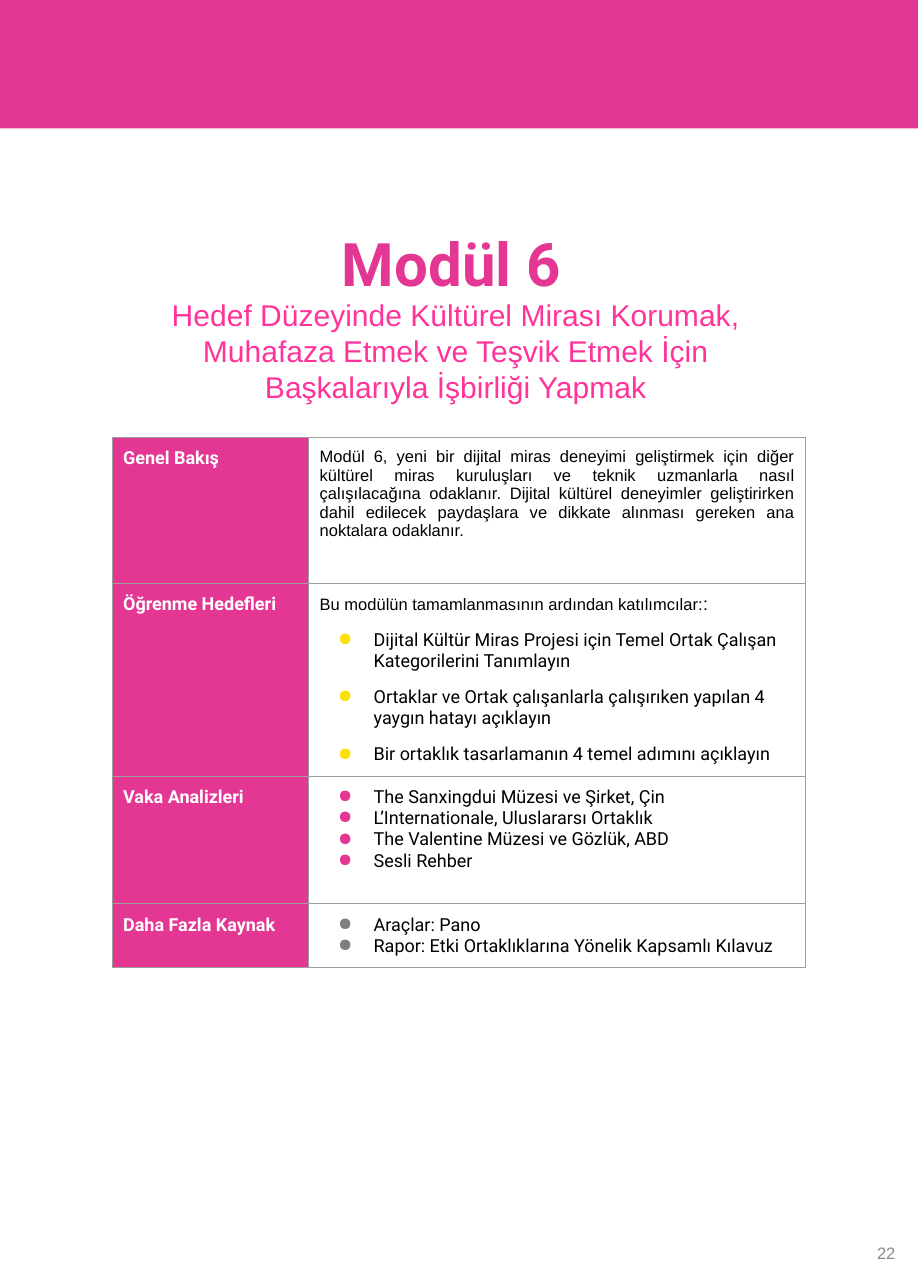
from lxml import etree
from pptx import Presentation
from pptx.dml.color import RGBColor
from pptx.enum.shapes import MSO_SHAPE
from pptx.enum.text import MSO_ANCHOR, MSO_AUTO_SIZE, PP_ALIGN
from pptx.oxml.ns import qn
from pptx.util import Inches, Pt

CENTER, RIGHT, JUSTIFY, LEFT = PP_ALIGN.CENTER, PP_ALIGN.RIGHT, PP_ALIGN.JUSTIFY, PP_ALIGN.LEFT
TOP, MIDDLE = MSO_ANCHOR.TOP, MSO_ANCHOR.MIDDLE
NO_FIT = MSO_AUTO_SIZE.NONE
RECTANGLE = MSO_SHAPE.RECTANGLE

COLORS = {
    "pink": "E43794", "subtitle": "FF3399", "yellow": "FBE000", "bullet_gray": "7F7F7F",
    "border": "9E9E9E", "number": "888888", "white": "FFFFFF", "black": "000000",
}
FORMATS = {
    "title": {"name": "Roboto", "size": Pt(40), "bold": True, "color": "pink"},
    "subtitle": {"name": "Arial", "size": Pt(20), "bold": False, "color": "subtitle"},
    "number": {"name": "Arial", "size": Pt(11), "bold": False, "color": "number"},
    "label": {"name": "Roboto", "size": Pt(12), "bold": True, "color": "white"},
    "prose": {"name": "Arial", "size": Pt(11), "bold": False, "color": "black"},
    "item": {"name": "Roboto", "size": Pt(12), "bold": False, "color": "black"},
}

TITLE = "Modül 6"
SUBTITLE = ("Hedef Düzeyinde Kültürel Mirası Korumak, Muhafaza Etmek ve Teşvik Etmek İçin "
            "Başkalarıyla İşbirliği Yapmak")
PAGE_NUMBER = "22"
SECTIONS = [
    {"label": "Genel Bakış", "height": 1.35, "align": JUSTIFY,
     "intro": [("Modül 6, yeni bir dijital miras deneyimi geliştirmek için diğer kültürel miras "
                "kuruluşları ve teknik uzmanlarla nasıl çalışılacağına odaklanır. Dijital kültürel "
                "deneyimler geliştirirken dahil edilecek paydaşlara ve dikkate alınması gereken "
                "ana noktalara odaklanır.", "prose")]},
    {"label": "Öğrenme Hedefleri", "height": 1.79, "bullet": "yellow", "gap": 10,
     "intro": [("Bu modülün tamamlanmasının ardından katılımcılar:", "prose"), (":", "item")],
     "items": ["Dijital Kültür Miras Projesi için Temel Ortak Çalışan Kategorilerini Tanımlayın",
               "Ortaklar ve Ortak çalışanlarla çalışırıken yapılan 4 yaygın hatayı açıklayın",
               "Bir ortaklık tasarlamanın 4 temel adımını açıklayın"]},
    {"label": "Vaka Analizleri", "height": 1.18, "bullet": "pink",
     "items": ["The Sanxingdui Müzesi ve Şirket, Çin",
               "L’Internationale, Uluslararsı Ortaklık",
               "The Valentine Müzesi ve Gözlük, ABD",
               "Sesli Rehber"]},
    {"label": "Daha Fazla Kaynak", "height": 0.59, "bullet": "bullet_gray",
     "items": ["Araçlar: Pano", "Rapor: Etki Ortaklıklarına Yönelik Kapsamlı Kılavuz"]},
]
COLUMN_WIDTHS = [1.82, 4.6]
TABLE_LEFT, TABLE_TOP = 1.04, 4.05
CELL_MARGIN = 0.1


def rgb(color):
    return RGBColor.from_string(COLORS[color])


def add_run(paragraph, text, style):
    run = paragraph.add_run()
    run.text = text
    for key, value in FORMATS[style].items():
        if key == "color":
            run.font.color.rgb = rgb(value)
        else:
            setattr(run.font, key, value)


def fill_box(shape, text, style, align, anchor, box):
    shape.left, shape.top, shape.width, shape.height = map(Inches, box)
    frame = shape.text_frame
    frame.word_wrap = True
    frame.auto_size = NO_FIT
    frame.vertical_anchor = anchor
    paragraph = frame.paragraphs[0]
    paragraph.alignment = align
    paragraph.space_before = Pt(0)
    add_run(paragraph, text, style)
    return paragraph


def add_bullet(paragraph, color):
    properties = paragraph._p.get_or_add_pPr()
    properties.set("marL", str(Inches(0.5)))
    properties.set("indent", str(-Inches(0.33)))
    bullet_color = etree.SubElement(properties, qn("a:buClr"))
    etree.SubElement(bullet_color, qn("a:srgbClr"), val=COLORS[color])
    etree.SubElement(properties, qn("a:buChar"), char="●")


def format_cell(cell, color):
    for side in ("left", "right", "top", "bottom"):
        setattr(cell, f"margin_{side}", Inches(CELL_MARGIN))
    cell.vertical_anchor = TOP
    properties = cell._tc.get_or_add_tcPr()
    for tag in ("a:lnL", "a:lnR", "a:lnT", "a:lnB"):
        line = etree.SubElement(properties, qn(tag), w=str(Pt(0.75)))
        solid = etree.SubElement(line, qn("a:solidFill"))
        etree.SubElement(solid, qn("a:srgbClr"), val=COLORS["border"])
    cell.fill.solid()
    cell.fill.fore_color.rgb = rgb(color)


def fill_section(label_cell, body_cell, section):
    format_cell(label_cell, "pink")
    format_cell(body_cell, "white")
    add_run(label_cell.text_frame.paragraphs[0], section["label"], "label")
    frame = body_cell.text_frame
    paragraph = frame.paragraphs[0]
    intro = section.get("intro", [])
    for text, style in intro:
        add_run(paragraph, text, style)
    paragraph.alignment = section.get("align", LEFT)
    for index, item in enumerate(section.get("items", [])):
        if index or intro:
            paragraph = frame.add_paragraph()
            paragraph.space_before = Pt(section.get("gap", 0))
        add_bullet(paragraph, section["bullet"])
        add_run(paragraph, item, "item")


def main():
    presentation = Presentation()
    presentation.slide_width, presentation.slide_height = Inches(8.5), Inches(11.93)
    slide = presentation.slides.add_slide(presentation.slide_layouts[0])

    banner = slide.shapes.add_shape(RECTANGLE, 0, 0, presentation.slide_width, Inches(1.19))
    banner.shadow.inherit = False
    banner.fill.solid()
    banner.fill.fore_color.rgb = rgb("pink")
    banner.line.fill.background()

    heading = fill_box(slide.shapes.title, TITLE, "title", CENTER, TOP, (1.03, 2.12, 6.3, 0.77))
    heading.line_spacing = 0.9
    fill_box(slide.placeholders[1], SUBTITLE, "subtitle", CENTER, TOP, (1.01, 2.7, 6.42, 1.15))
    number_box = slide.shapes.add_textbox(0, 0, 0, 0)
    fill_box(number_box, PAGE_NUMBER, "number", RIGHT, MIDDLE, (5.39, 11.41, 3, 0.4))

    total_height = sum(section["height"] for section in SECTIONS)
    table = slide.shapes.add_table(
        len(SECTIONS), len(COLUMN_WIDTHS), Inches(TABLE_LEFT), Inches(TABLE_TOP),
        Inches(sum(COLUMN_WIDTHS)), Inches(total_height)).table
    table.first_row = table.horz_banding = False
    for column, width in zip(table.columns, COLUMN_WIDTHS):
        column.width = Inches(width)
    for row, section in zip(table.rows, SECTIONS):
        row.height = Inches(section["height"])
        fill_section(row.cells[0], row.cells[1], section)

    presentation.save("out.pptx")


if __name__ == "__main__":
    main()
